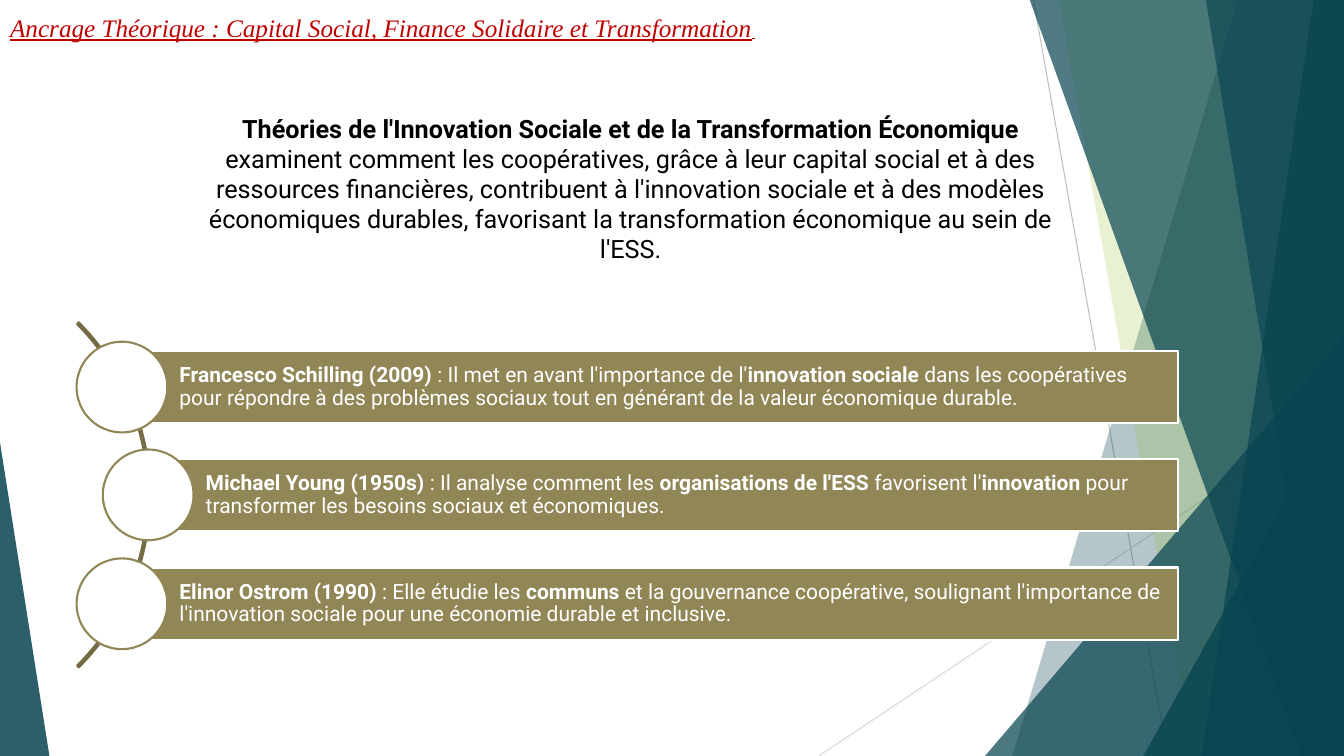
from dataclasses import dataclass

import pptx
import pptx.dml.color
import pptx.enum.shapes
import pptx.enum.text
import pptx.oxml
import pptx.oxml.ns
import pptx.util

WIDE, HIGH = 1333, 750
KIND = pptx.enum.shapes.MSO_SHAPE
ALIGN = pptx.enum.text.PP_ALIGN
ANCHOR = pptx.enum.text.MSO_ANCHOR


@dataclass(frozen=True)
class Theme:
    teal: str = "084450"
    lime: str = "90C226"
    red: str = "C00000"
    khaki: str = "918655"
    olive: str = "746B44"
    white: str = "FFFFFF"
    black: str = "000000"
    sans: str = "Roboto"
    serif: str = "Times New Roman"
    head: float = 18
    body: float = 15
    small: float = 10.5
    edge: float = 1.5
    hair: float = 0.75


@dataclass(frozen=True)
class Ray:
    start: tuple[int, int]
    end: tuple[int, int]
    color: str


@dataclass(frozen=True)
class Band:
    """Reaches the right edge of the slide; left side slants from top to foot."""
    top: int
    foot: int
    color: str
    alpha: int


@dataclass(frozen=True)
class Wedge:
    """Triangle standing on the bottom edge, its peak at one side."""
    left: int
    top: int
    width: int
    peak: int
    alpha: int


@dataclass(frozen=True)
class Author:
    left: int
    text: str


THEME = Theme()
RAYS = [
    Ray((1025, 0), (1158, HIGH), "BFBFBF"),
    Ray((WIDE, 403), (812, HIGH), "D9D9D9"),
]
FACETS = [
    Band(1228, 1004, THEME.teal, 30),
    Band(1050, 1183, THEME.lime, 20),
    Wedge(977, 333, 356, 1, 72),
    Band(1021, 1291, THEME.teal, 70),
    Band(1303, 1192, THEME.teal, 70),
    Band(1196, 1318, THEME.teal, 65),
    Wedge(1134, 393, 199, 1, 80),
    Wedge(0, 439, 49, 0, 85),
]
# Asterisks switch bold on and off
AUTHORS = [
    Author(121, "*Francesco Schilling (2009)* : Il met en avant l'importance de "
           "l'*innovation sociale* dans les coopératives pour répondre à des problèmes "
           "sociaux tout en générant de la valeur économique durable."),
    Author(147, "*Michael Young (1950s)* : Il analyse comment les *organisations de "
           "l'ESS* favorisent l'*innovation* pour transformer les besoins sociaux et "
           "économiques."),
    Author(121, "*Elinor Ostrom (1990)* : Elle étudie les *communs* et la gouvernance "
           "coopérative, soulignant l'importance de l'innovation sociale pour une "
           "économie durable et inclusive."),
]
INTRO = [
    "*Théories de l'Innovation Sociale et de la Transformation Économique*",
    "examinent comment les coopératives, grâce à leur capital social et à des "
    "ressources financières, contribuent à l'innovation sociale et à des modèles "
    "économiques durables, favorisant la transformation économique au sein de l'ESS.",
]


def px(count: int) -> pptx.util.Emu:
    return pptx.util.Emu(count * 9144)


def rgb(code: str) -> pptx.dml.color.RGBColor:
    return pptx.dml.color.RGBColor.from_string(code)


def write(par, text: str, *, size: float, color: str, font: str = THEME.sans,
          slant: bool = False, under: bool = False) -> None:
    for index, part in enumerate(text.split("*")):
        if part:
            run = par.add_run()
            run.text = part
            face = run.font
            face.name, face.size = font, pptx.util.Pt(size)
            face.bold, face.italic, face.underline = index % 2 == 1, slant, under
            face.color.rgb = rgb(color)


def paint(shape, fill: str | None, line: str | None = None, alpha: int = 100) -> None:
    shape.shadow.inherit = False
    if fill:
        shape.fill.solid()
        shape.fill.fore_color.rgb = rgb(fill)
    else:
        shape.fill.background()
    if alpha < 100:
        tint = shape.fill._xPr.find(".//" + pptx.oxml.ns.qn("a:srgbClr"))
        tint.append(pptx.oxml.parse_xml(
            f'<a:alpha {pptx.oxml.ns.nsdecls("a")} val="{alpha * 1000}"/>'))
    if line:
        shape.line.color.rgb = rgb(line)
        shape.line.width = pptx.util.Pt(THEME.edge)
    else:
        shape.line.fill.background()


def place(slide, kind, left: int, top: int, width: int, height: int):
    return slide.shapes.add_shape(kind, px(left), px(top), px(width), px(height))


def draw_ray(slide, ray: Ray) -> None:
    line = slide.shapes.add_connector(
        pptx.enum.shapes.MSO_CONNECTOR.STRAIGHT, *map(px, ray.start + ray.end))
    line.line.color.rgb = rgb(ray.color)
    line.line.width = pptx.util.Pt(THEME.hair)
    line._element.spPr.append(pptx.oxml.parse_xml(
        f'<a:effectLst {pptx.oxml.ns.nsdecls("a")}/>'))


def draw_band(slide, band: Band) -> None:
    path = slide.shapes.build_freeform(band.top, -1, scale=px(1))
    path.add_line_segments([(WIDE, -1), (WIDE, HIGH), (band.foot, HIGH)], close=True)
    paint(path.convert_to_shape(), band.color, alpha=band.alpha)


def draw_wedge(slide, wedge: Wedge) -> None:
    shape = place(slide, KIND.ISOSCELES_TRIANGLE, wedge.left, wedge.top,
                  wedge.width, HIGH - wedge.top)
    shape.adjustments[0] = wedge.peak
    paint(shape, THEME.teal, alpha=wedge.alpha)


def draw_arc(slide) -> None:
    arc = place(slide, KIND.BLOCK_ARC, -335, 249, 484, 484)
    for index, value in enumerate((189, 27, 0.005)):
        arc.adjustments[index] = value
    paint(arc, None, THEME.olive)


def draw_author(slide, author: Author, top: int) -> None:
    bar = place(slide, KIND.RECTANGLE, author.left, top, 1168 - author.left, 72)
    paint(bar, THEME.khaki, THEME.white)
    frame = bar.text_frame
    frame.word_wrap, frame.vertical_anchor = True, ANCHOR.MIDDLE
    frame.margin_left = px(57)
    frame.margin_top = frame.margin_right = frame.margin_bottom = px(4)
    par = frame.paragraphs[0]
    par.alignment, par.line_spacing = ALIGN.LEFT, 0.9
    write(par, author.text, size=THEME.body, color=THEME.white)
    disc = place(slide, KIND.OVAL, author.left - 45, top - 9, 90, 90)
    paint(disc, THEME.white, THEME.khaki)


def draw_title(slide) -> None:
    title = slide.shapes.title
    title.left, title.top, title.width, title.height = map(px, (0, 7, 940, 144))
    frame = title.text_frame
    frame.word_wrap, frame.vertical_anchor = True, ANCHOR.TOP
    par = frame.paragraphs[0]
    par.alignment = ALIGN.LEFT
    write(par, "Ancrage Théorique : Capital Social, Finance Solidaire et Transformation",
          size=THEME.head, color=THEME.red, font=THEME.serif, slant=True, under=True)
    write(par, " ", size=THEME.small, color=THEME.red, slant=True, under=True)


def draw_intro(slide) -> None:
    frame = slide.shapes.add_textbox(*map(px, (179, 107, 893, 192))).text_frame
    frame.word_wrap = True
    for index, text in enumerate(INTRO):
        par = frame.add_paragraph() if index else frame.paragraphs[0]
        par.alignment = ALIGN.CENTER
        write(par, text, size=THEME.head, color=THEME.black)


def main() -> None:
    deck = pptx.Presentation()
    deck.slide_width, deck.slide_height = px(WIDE), px(HIGH)
    slide = deck.slides.add_slide(deck.slide_layouts[5])
    # Backdrop
    for ray in RAYS:
        draw_ray(slide, ray)
    for facet in FACETS:
        if isinstance(facet, Band):
            draw_band(slide, facet)
        else:
            draw_wedge(slide, facet)
    # Content
    draw_title(slide)
    draw_arc(slide)
    for index, author in enumerate(AUTHORS):
        draw_author(slide, author, 348 + index * 215 // 2)
    draw_intro(slide)
    deck.save("out.pptx")


if __name__ == "__main__":
    main()
